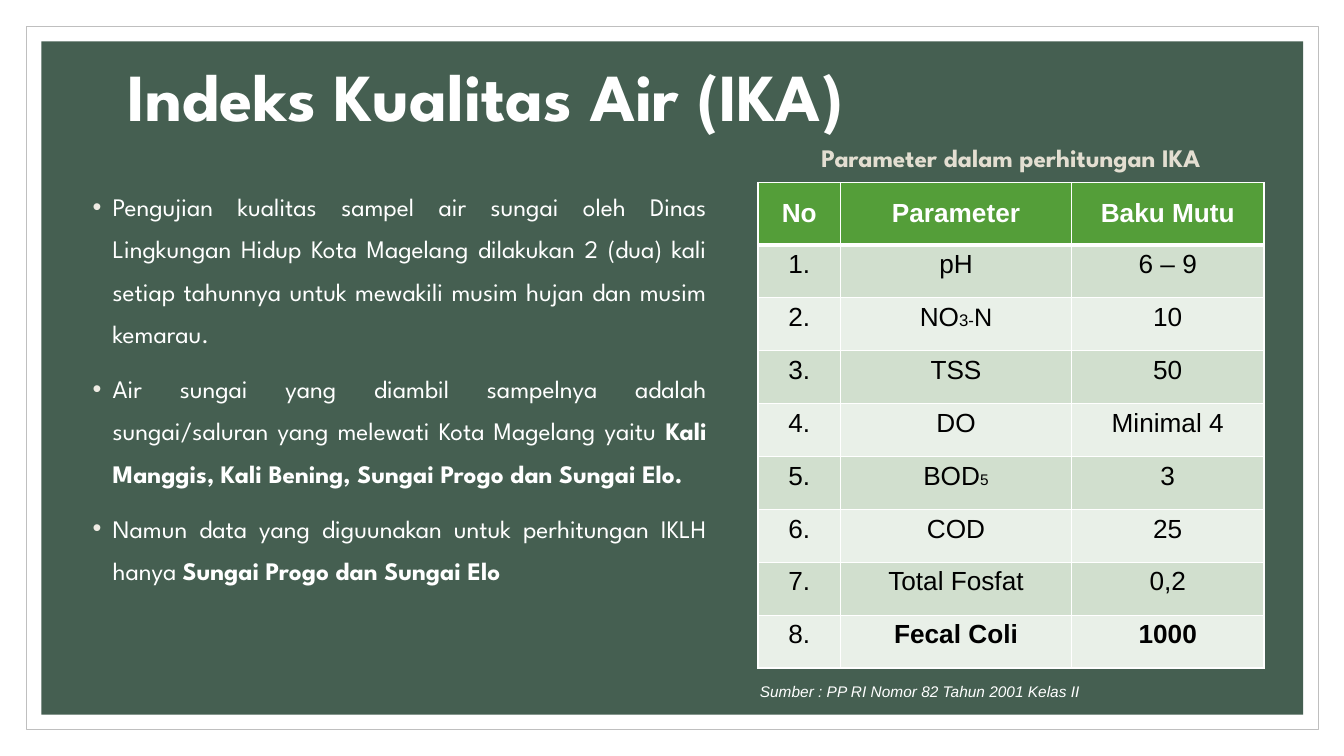
from lxml import etree
from pptx import Presentation
from pptx.dml.color import RGBColor
from pptx.enum.shapes import MSO_SHAPE
from pptx.enum.text import MSO_ANCHOR, PP_ALIGN
from pptx.oxml.ns import qn
from pptx.util import Pt

RECT = MSO_SHAPE.RECTANGLE
TOP, MID = MSO_ANCHOR.TOP, MSO_ANCHOR.MIDDLE
LEFT, CENTER, JUST = PP_ALIGN.LEFT, PP_ALIGN.CENTER, PP_ALIGN.JUSTIFY

# Content: a run is (text, bold) in the body, (text, size) in the table
TITLE = "Indeks Kualitas Air (IKA)"
CAPTION = "Parameter dalam perhitungan IKA"
SOURCE = "Sumber : PP RI Nomor 82 Tahun 2001 Kelas II"
POINTS = [
    [("Pengujian kualitas sampel air sungai oleh Dinas Lingkungan Hidup Kota "
      "Magelang dilakukan 2 (dua) kali setiap tahunnya untuk mewakili musim "
      "hujan dan musim kemarau.", False)],
    [("Air sungai yang diambil sampelnya adalah sungai/saluran yang melewati "
      "Kota Magelang yaitu ", False),
     ("Kali Manggis, Kali Bening, Sungai Progo dan Sungai Elo. ", True)],
    [("Namun data yang diguunakan untuk perhitungan IKLH hanya ", False),
     ("Sungai Progo dan Sungai Elo", True)],
]
BIG = 18.7
HEAD = ["No", "Parameter", "Baku Mutu"]
LIMITS = [
    ([("pH", BIG)], "6 – 9"),
    ([("NO", BIG), ("3-", 12), ("N", 18)], "10"),
    ([("TSS", BIG)], "50"),
    ([("DO", BIG)], "Minimal 4"),
    ([("BOD", BIG), ("5", 11)], "3"),
    ([("COD", BIG)], "25"),
    ([("Total Fosfat", BIG)], "0,2"),
    ([("Fecal Coli", BIG)], "1000"),
]

# Style
COLORS = {"white": "FFFFFF", "frame": "BFBFBF", "panel": "455F51",
          "bullet": "EEEBE3", "caption": "E3DED1", "head": "549E39",
          "odd": "D1DFCE", "even": "E9F0E8", "ink": "000000"}
SPARTAN, ARIAL = "League Spartan", "Arial"
COLS = [59, 165, 137.5]
HEAD_H, ROW_H = 44.6, 37.8

deck = Presentation()
deck.slide_width, deck.slide_height = Pt(960), Pt(540)
slide = deck.slides.add_slide(deck.slide_layouts[6])
shapes = slide.shapes


def rgb(name):
    return RGBColor.from_string(COLORS[name])


def add_rect(box, fill, line=None):
    rect = shapes.add_shape(RECT, *map(Pt, box))
    rect.shadow.inherit = False
    rect.fill.solid()
    rect.fill.fore_color.rgb = rgb(fill)
    if line:
        rect.line.color.rgb = rgb(line)
        rect.line.width = Pt(0.5)
    else:
        rect.line.fill.background()


def add_frame(box, anchor):
    frame = shapes.add_textbox(*map(Pt, box)).text_frame
    frame.word_wrap = True
    frame.vertical_anchor = anchor
    return frame


def add_run(para, text, size, color, face, bold=False, italic=False):
    run = para.add_run()
    run.text = text
    font = run.font
    font.size, font.name = Pt(size), face
    font.bold, font.italic = bold, italic
    font.color.rgb = rgb(color)


def set_indent(para, left, first):
    props = para._p.get_or_add_pPr()
    props.set("marL", str(Pt(left)))
    props.set("indent", str(Pt(first)))
    return props


def add_bullet(para):
    props = set_indent(para, 14.4, -14.4)
    tint = etree.SubElement(props, qn("a:buClr"))
    etree.SubElement(tint, qn("a:srgbClr"), val=COLORS["bullet"])
    etree.SubElement(props, qn("a:buFont"), typeface=ARIAL)
    etree.SubElement(props, qn("a:buChar"), char="•")


def set_cell(cell, runs, fill, color, bold, base):
    props = cell._tc.get_or_add_tcPr()
    for side, width in (("L", 1), ("R", 1), ("T", 1), ("B", base)):
        edge = etree.SubElement(props, qn("a:ln" + side), w=str(Pt(width)))
        paint = etree.SubElement(edge, qn("a:solidFill"))
        etree.SubElement(paint, qn("a:srgbClr"), val=COLORS["white"])
    cell.fill.solid()
    cell.fill.fore_color.rgb = rgb(fill)
    para = cell.text_frame.paragraphs[0]
    para.alignment = CENTER
    for text, size in runs:
        add_run(para, text, size, color, ARIAL, bold)


# Background frame and panel
add_rect((18.7, 18.7, 923, 502.6), "white", "frame")
add_rect((29.5, 29.5, 901.4, 481), "panel")

# Title
para = add_frame((84.2, 29.5, 792, 83.5), MID).paragraphs[0]
para.alignment, para.line_spacing = LEFT, 0.9
add_run(para, TITLE, 48, "white", SPARTAN, True)

# Bullet points
frame = add_frame((59, 124.6, 452.9, 369.4), TOP)
for i, point in enumerate(POINTS):
    para = frame.add_paragraph() if i else frame.paragraphs[0]
    para.alignment, para.line_spacing = JUST, 1.4
    para.space_before = Pt(9)
    add_bullet(para)
    for text, bold in point:
        add_run(para, text, 18, "white", SPARTAN, bold)

# Table caption
frame = add_frame((535, 97.2, 374.4, 50.4), TOP)
frame.margin_top = Pt(4.8)
para = frame.paragraphs[0]
para.alignment = CENTER
add_run(para, CAPTION, 18, "caption", SPARTAN, True)

# Table of limits
count = len(LIMITS)
table = shapes.add_table(count + 1, len(COLS), Pt(541.4), Pt(130.3),
                         Pt(sum(COLS)), Pt(HEAD_H + count * ROW_H)).table
for col, width in zip(table.columns, COLS):
    col.width = Pt(width)
for i, row in enumerate(table.rows):
    row.height = Pt(ROW_H if i else HEAD_H)
for c, label in enumerate(HEAD):
    cell = table.cell(0, c)
    set_cell(cell, [(label, BIG)], "head", "white", True, 3)
    cell.vertical_anchor = MID
for r, (name, limit) in enumerate(LIMITS, 1):
    fill = "odd" if r % 2 else "even"
    for c, runs in enumerate([[(f"{r}.", BIG)], name, [(limit, BIG)]]):
        set_cell(table.cell(r, c), runs, fill, "ink", r == count and c > 0, 1)

# Source line
para = add_frame((499.7, 483.1, 363.6, 20.9), MID).paragraphs[0]
para.alignment = JUST
set_indent(para, 0, 36)
add_run(para, SOURCE, 11, "white", ARIAL, italic=True)

deck.save("out.pptx")
